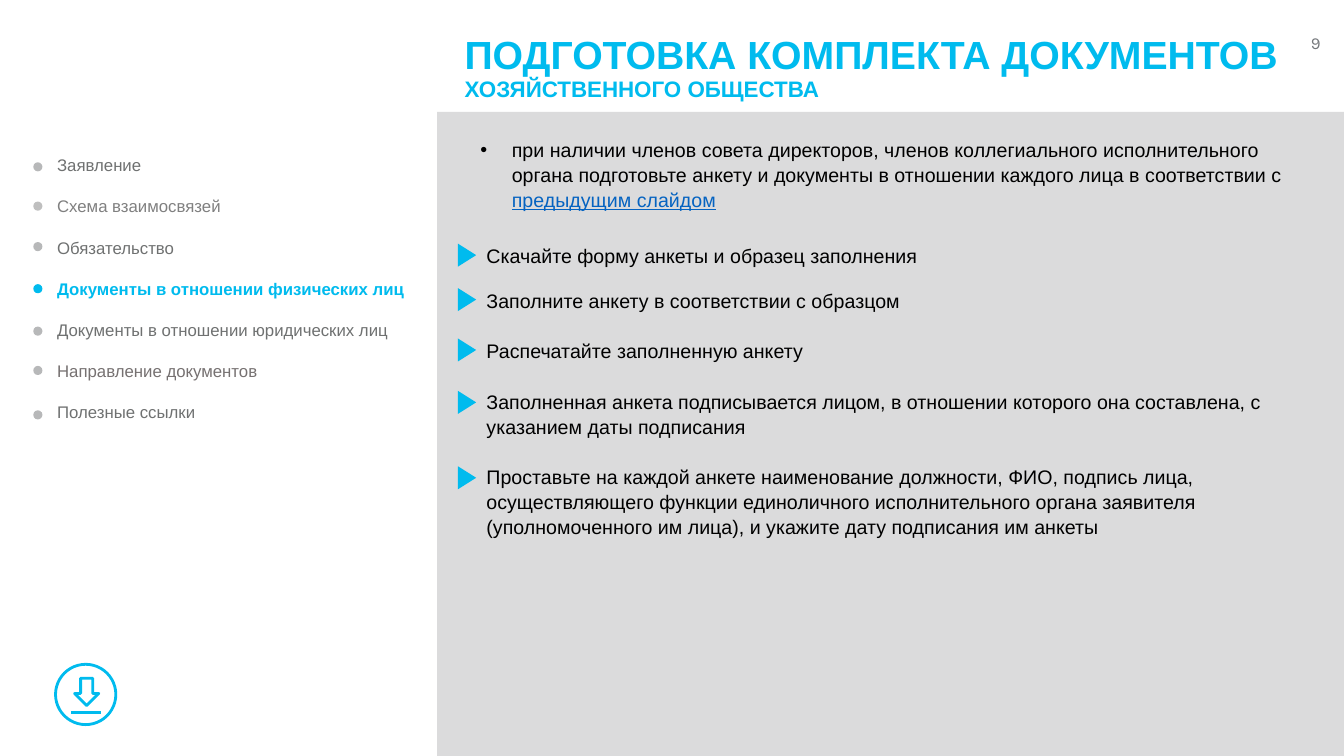
from dataclasses import dataclass

from lxml import etree
from pptx import Presentation
from pptx import util as u
from pptx.dml.color import RGBColor
from pptx.enum import shapes, text
from pptx.oxml.ns import qn


@dataclass(frozen=True)
class Theme:
    accent: str = "00BBEE"
    panel: str = "DBDBDC"
    body: str = "000000"
    link: str = "0563C1"
    number: str = "74777B"
    menu: str = "6F7171"
    menu_soft: str = "808080"
    menu_warm: str = "767171"
    dot: str = "B7B8B9"
    dot_soft: str = "BFBFBF"
    font: str = "Arial"
    number_font: str = "Karla"
    title_size: int = 28
    subtitle_size: int = 16
    body_size: int = 14
    menu_size: int = 12


@dataclass(frozen=True)
class Box:
    """Position and size in centimetres."""
    left: float
    top: float
    width: float
    height: float

    def lengths(self) -> tuple:
        return tuple(u.Cm(n) for n in (self.left, self.top, self.width, self.height))


@dataclass(frozen=True)
class MenuItem:
    label: str
    dot_top: float
    color: str
    dot_color: str
    bold: bool = False


THEME = Theme()
LINE_SPACING = 1.07
STEP_GAP = 18

MENU = (
    MenuItem("Заявление", 4.09, THEME.menu, THEME.dot),
    MenuItem("Схема взаимосвязей", 5.08, THEME.menu_soft, THEME.dot_soft),
    MenuItem("Обязательство", 6.10, THEME.menu, THEME.dot),
    MenuItem("Документы в отношении физических лиц", 7.16, THEME.accent, THEME.accent, True),
    MenuItem("Документы в отношении юридических лиц", 8.23, THEME.menu, THEME.dot),
    MenuItem("Направление документов", 9.22, THEME.menu_warm, THEME.dot),
    MenuItem("Полезные ссылки", 10.34, THEME.menu, THEME.dot),
)
DOWNLOAD_STEP = ("Скачайте форму анкеты и образец заполнения",)
NEXT_STEPS = (
    "Заполните анкету в соответствии с образцом",
    "Распечатайте заполненную анкету",
    "Заполненная анкета подписывается лицом, в отношении которого она составлена, "
    "с указанием даты подписания",
    "Проставьте на каждой анкете наименование должности, ФИО, подпись лица, "
    "осуществляющего функции единоличного исполнительного органа заявителя "
    "(уполномоченного им лица), и укажите дату подписания им анкеты",
)
MARKER_TOPS = (6.20, 7.32, 8.59, 9.91, 11.81)


def add_figure(parent, kind, box: Box, fill: str | None = None, line: str | None = None):
    shape = parent.shapes.add_shape(kind, *box.lengths())
    shape.shadow.inherit = False
    if fill:
        shape.fill.solid()
        shape.fill.fore_color.rgb = RGBColor.from_string(fill)
    else:
        shape.fill.background()
    if line:
        shape.line.color.rgb = RGBColor.from_string(line)
        shape.line.width = u.Pt(2)
    else:
        shape.line.fill.background()
    return shape


def add_text(parent, box: Box, content: str = ""):
    frame = parent.shapes.add_textbox(*box.lengths()).text_frame
    frame.word_wrap = True
    frame.text = content
    return frame


def format_run(run, size: int, color: str, bold: bool = False, font: str = THEME.font) -> None:
    run.font.name = font
    run.font.size = u.Pt(size)
    run.font.bold = bold
    run.font.color.rgb = RGBColor.from_string(color)


def set_indent(paragraph, margin: float, hanging: float = 0) -> None:
    properties = paragraph._p.get_or_add_pPr()
    properties.set("marL", str(u.Cm(margin)))
    properties.set("indent", str(u.Cm(hanging)))


def add_title(slide) -> None:
    frame = add_text(slide, Box(11.46, -0.1, 22.35, 3.68),
                     "ПОДГОТОВКА КОМПЛЕКТА ДОКУМЕНТОВ\vХОЗЯЙСТВЕННОГО ОБЩЕСТВА")
    frame.vertical_anchor = text.MSO_ANCHOR.MIDDLE
    paragraph = frame.paragraphs[0]
    paragraph.line_spacing = 0.9
    for run, size in zip(paragraph.runs, (THEME.title_size, THEME.subtitle_size)):
        format_run(run, size, THEME.accent, bold=True)


def add_page_number(slide) -> None:
    paragraph = add_text(slide, Box(27.38, 0.71, 6.15, 0.76), "9").paragraphs[0]
    paragraph.alignment = text.PP_ALIGN.RIGHT
    format_run(paragraph.runs[0], THEME.menu_size, THEME.number, font=THEME.number_font)


def add_condition(slide) -> None:
    frame = add_text(
        slide, Box(10.59, 3.3, 22.84, 2.18),
        "при наличии членов совета директоров, членов коллегиального исполнительного органа "
        "подготовьте анкету и документы в отношении каждого лица в соответствии с ")
    paragraph = frame.paragraphs[0]
    paragraph.line_spacing = LINE_SPACING
    set_indent(paragraph, 2.06, -0.79)
    properties = paragraph._p.get_or_add_pPr()
    etree.SubElement(properties, qn("a:buFont"), typeface=THEME.font)
    etree.SubElement(properties, qn("a:buChar"), char="•")
    format_run(paragraph.runs[0], THEME.body_size, THEME.body)
    reference = paragraph.add_run()
    reference.text = "предыдущим слайдом"
    format_run(reference, THEME.body_size, THEME.link)
    reference.font.underline = True


def add_steps(slide, box: Box, steps: tuple[str, ...]) -> None:
    frame = add_text(slide, box, "\n".join(steps))
    for paragraph in frame.paragraphs:
        set_indent(paragraph, 1.27)
        paragraph.line_spacing = LINE_SPACING
        paragraph.space_after = u.Pt(STEP_GAP)
        format_run(paragraph.runs[0], THEME.body_size, THEME.body)
    frame.paragraphs[-1].space_after = u.Pt(0)


def add_menu(slide) -> None:
    group = slide.shapes.add_group_shape()
    frame = add_text(group, Box(1.19, 3.78, 9.37, 7.06), "\n".join(item.label for item in MENU))
    for item, paragraph in zip(MENU, frame.paragraphs):
        paragraph.space_after = u.Pt(15)
        format_run(paragraph.runs[0], THEME.menu_size, item.color, item.bold)
        add_figure(group, shapes.MSO_SHAPE.OVAL, Box(0.84, item.dot_top, 0.23, 0.23), item.dot_color)


def add_download_icon(slide) -> None:
    group = slide.shapes.add_group_shape()
    add_figure(group, shapes.MSO_SHAPE.OVAL, Box(1.4, 16.74, 1.52, 1.52), line=THEME.accent)
    add_figure(group, shapes.MSO_SHAPE.DOWN_ARROW, Box(1.88, 17.09, 0.61, 0.69), line=THEME.accent)
    base = group.shapes.add_connector(shapes.MSO_CONNECTOR.STRAIGHT,
                                      u.Cm(1.8), u.Cm(17.96), u.Cm(2.54), u.Cm(17.96))
    base.line.color.rgb = RGBColor.from_string(THEME.accent)
    base.line.width = u.Pt(2)
    etree.SubElement(base._element.spPr, qn("a:effectLst"))


def main() -> None:
    presentation = Presentation()
    presentation.slide_width, presentation.slide_height = u.Cm(33.87), u.Cm(19.05)
    slide = presentation.slides.add_slide(presentation.slide_layouts[6])

    # Header and content panel
    add_page_number(slide)
    add_figure(slide, shapes.MSO_SHAPE.RECTANGLE, Box(11.02, 2.82, 22.85, 16.23), THEME.panel)
    add_title(slide)

    # Condition and steps
    add_condition(slide)
    add_steps(slide, Box(10.74, 5.97, 22.84, 0.89), DOWNLOAD_STEP)
    add_steps(slide, Box(10.74, 7.11, 22.84, 6.65), NEXT_STEPS)
    for top in MARKER_TOPS:
        marker = add_figure(slide, shapes.MSO_SHAPE.ISOSCELES_TRIANGLE,
                            Box(11.48, top, 0.58, 0.46), THEME.accent)
        marker.rotation = 90

    # Side menu and download icon
    add_menu(slide)
    add_download_icon(slide)

    presentation.save("out.pptx")


if __name__ == "__main__":
    main()
